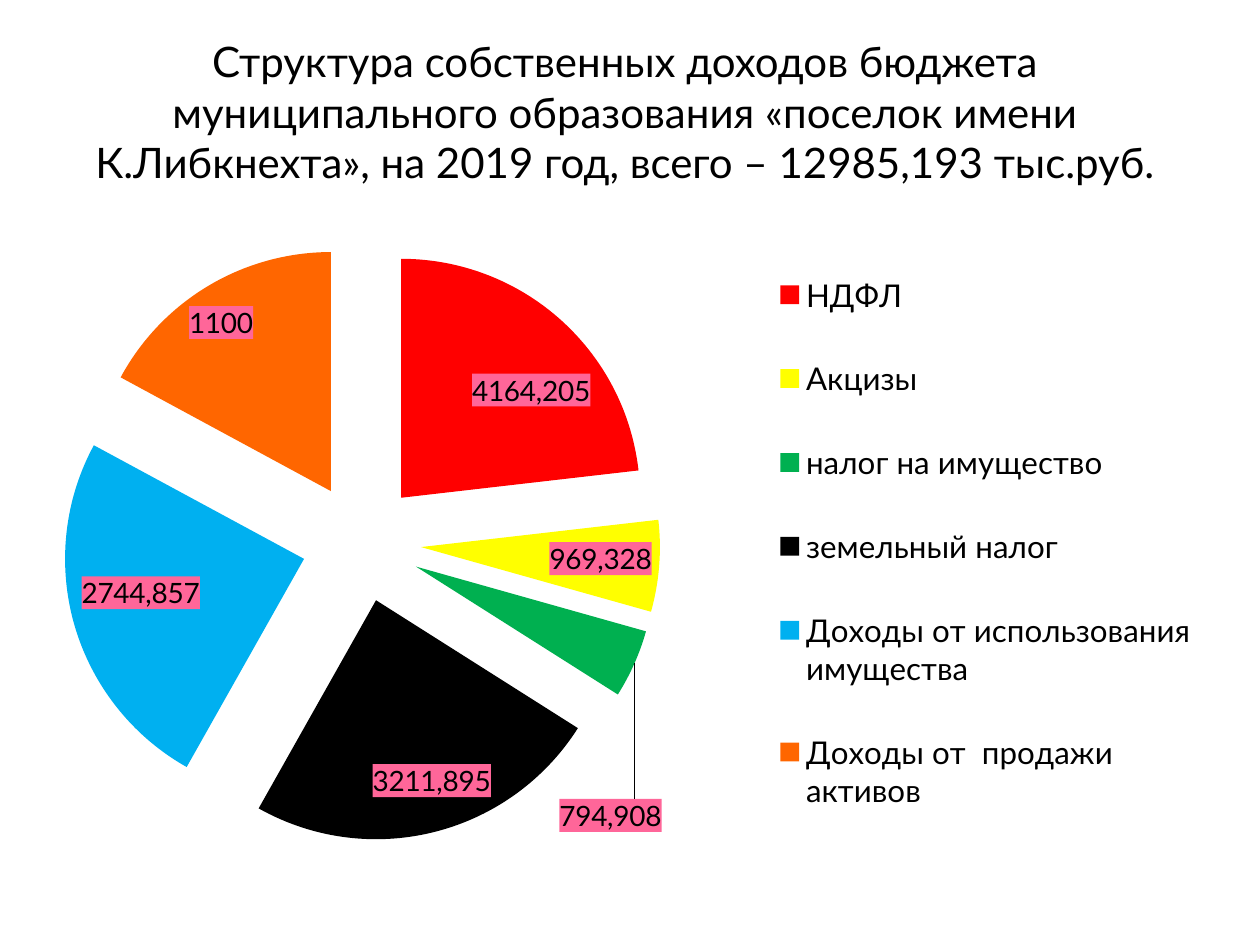
import pptx
import pptx.chart.data
import pptx.dml.color
import pptx.enum.chart
import pptx.enum.text
import pptx.oxml
import pptx.util

Pt = pptx.util.Pt
CHART_NS = 'xmlns:c="http://schemas.openxmlformats.org/drawingml/2006/chart"'
DRAWING_NS = 'xmlns:a="http://schemas.openxmlformats.org/drawingml/2006/main"'
EDGES = '<c:xMode val="edge"/><c:yMode val="edge"/>'
LabelPosition = pptx.enum.chart.XL_LABEL_POSITION
INSIDE, OUTSIDE = LabelPosition.INSIDE_END, LabelPosition.OUTSIDE_END

TITLE = ("Структура собственных доходов бюджета муниципального образования "
         "«поселок имени К.Либкнехта», на 2019 год, всего – 12985,193 тыс.руб.")
# category, slice value, colour, label, label position, label offset
INCOME = [
    ("НДФЛ", 3454, "FF0000", "4164,205", INSIDE, (0.03, 0.07)),
    ("Акцизы", 922, "FFFF00", "969,328", INSIDE, (0, -0.01)),
    ("налог на имущество", 689, "00B050", "794,908", OUTSIDE, (-0.07, 0.19)),
    ("земельный налог", 3604, "000000", "3211,895", INSIDE, (0.05, -0.04)),
    ("Доходы от использования имущества", 3684, "00B0F0", "2744,857", INSIDE, (0, -0.02)),
    ("Доходы от  продажи активов", 2550, "FF6600", "1100", INSIDE, (-0.02, 0.02)),
]


def color(value):
    return pptx.dml.color.RGBColor.from_string(value)


def layout(extra="", **fractions):
    """Manual chart layout; x, y, w and h are fractions of the chart."""
    parts = "".join(f'<c:{key} val="{value}"/>' for key, value in fractions.items())
    return pptx.oxml.parse_xml(
        f"<c:layout {CHART_NS}><c:manualLayout>{extra}{parts}</c:manualLayout></c:layout>")


class SlideBuilder:
    font_name = "Lato"
    text_color = "000000"
    label_fill = "FF6699"

    def __init__(self, deck):
        self.page = deck.slides.add_slide(deck.slide_layouts[5])

    def style(self, font, size):
        font.name = self.font_name
        font.size = Pt(size)
        font.color.rgb = color(self.text_color)

    def title(self, text, left, top, width, height, size):
        box = self.page.shapes.title
        box.left, box.top, box.width, box.height = map(Pt, (left, top, width, height))
        frame = box.text_frame
        frame.word_wrap = True
        frame.vertical_anchor = pptx.enum.text.MSO_ANCHOR.MIDDLE
        para = frame.paragraphs[0]
        para.alignment = pptx.enum.text.PP_ALIGN.CENTER
        span = para.add_run()
        span.text = text
        self.style(span.font, size)

    def pie(self, rows, left, top, width, height, size, label_size):
        data = pptx.chart.data.CategoryChartData()
        data.categories = [row[0] for row in rows]
        data.add_series("Series 1", [row[1] for row in rows])
        chart = self.page.shapes.add_chart(
            pptx.enum.chart.XL_CHART_TYPE.PIE,
            Pt(left), Pt(top), Pt(width), Pt(height), data).chart
        chart.has_title = False
        self.style(chart.font, size)
        self.legend(chart)
        plot = chart.plots[0]
        plot.vary_by_categories = True
        series = plot.series[0]
        series.data_labels.show_value = True
        series.data_labels.position = LabelPosition.BEST_FIT
        self.style(series.data_labels.font, label_size)
        for index, (_, _, fill, text, position, _) in enumerate(rows):
            point = series.points[index]
            point.format.fill.solid()
            point.format.fill.fore_color.rgb = color(fill)
            self.label(point.data_label, text, label_size, position)
        self.finish_pie(chart, [row[-1] for row in rows])

    def legend(self, chart):
        chart.has_legend = True
        chart.legend.position = pptx.enum.chart.XL_LEGEND_POSITION.RIGHT
        chart.legend.include_in_layout = False
        for old in chart.element.xpath(".//c:legend/c:layout"):
            old.getparent().remove(old)
        position = chart.element.xpath(".//c:legend/c:legendPos")[0]
        position.addnext(layout(EDGES, x=0.62, y=0.05, w=0.37, h=0.9))

    def label(self, label, text, size, position):
        span = label.text_frame.paragraphs[0].add_run()
        span.text = text
        self.style(span.font, size)
        label.position = position

    def finish_pie(self, chart, offsets):
        """Explode the slices, fill and shift the labels and place the plot."""
        root = chart.element
        root.xpath(".//c:ser/c:dPt")[0].addprevious(
            pptx.oxml.parse_xml(f'<c:explosion {CHART_NS} val="25"/>'))
        for text in root.xpath(".//c:dLbl/c:tx"):
            text.addnext(pptx.oxml.parse_xml(
                f'<c:spPr {CHART_NS} {DRAWING_NS}><a:solidFill>'
                f'<a:srgbClr val="{self.label_fill}"/></a:solidFill></c:spPr>'))
        for index, (x, y) in zip(root.xpath(".//c:dLbl/c:idx"), offsets):
            index.addnext(layout(x=x, y=y))
        area = root.xpath(".//c:plotArea")[0]
        for old in area.xpath("./c:layout"):
            area.remove(old)
        area.insert(0, layout('<c:layoutTarget val="inner"/>' + EDGES,
                              x=0.01, y=0.07, w=0.52, h=0.86))


def main():
    deck = pptx.Presentation()
    deck.slide_width, deck.slide_height = Pt(720), Pt(540)
    builder = SlideBuilder(deck)
    builder.title(TITLE, 28, 16.5, 658, 94.5, size=24)
    builder.pie(INCOME, 26.5, 111.5, 667, 397, size=17.9, label_size=16)
    deck.save("out.pptx")


if __name__ == "__main__":
    main()
